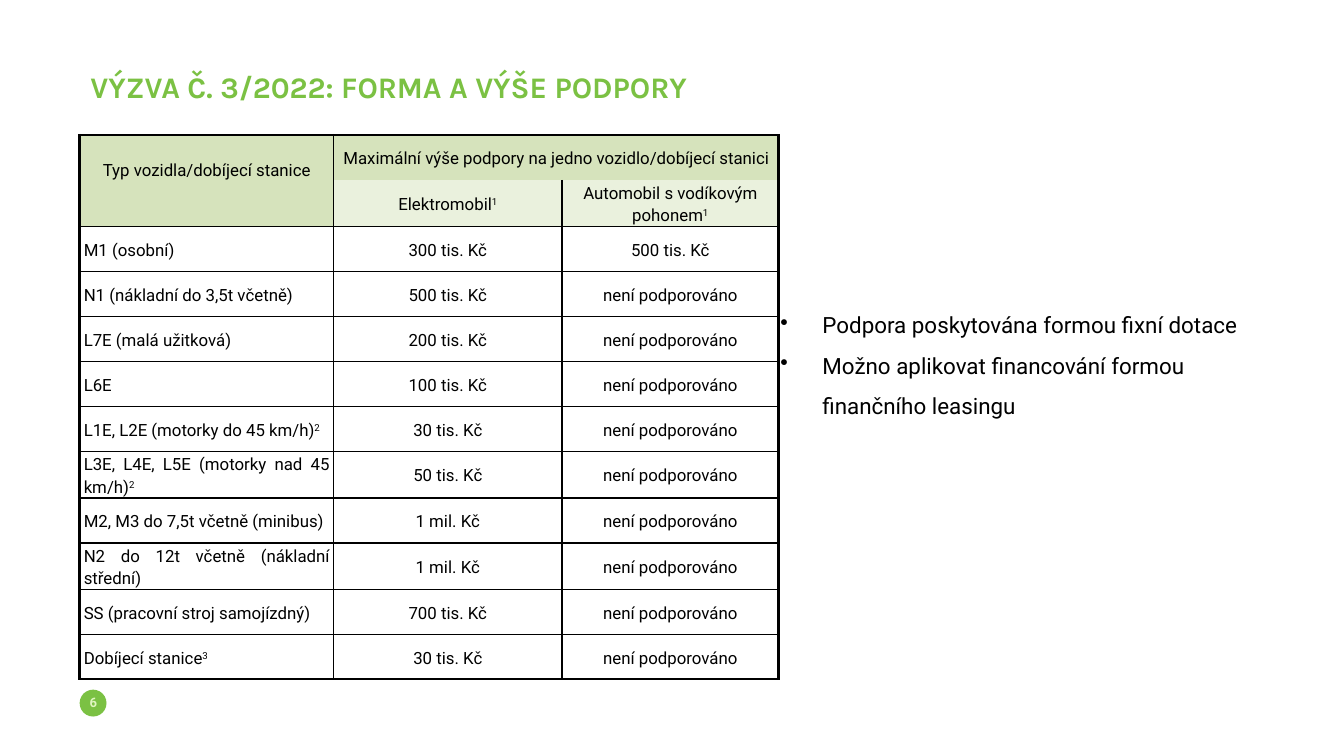
from lxml.etree import SubElement as Sub
from pptx import Presentation as Deck
from pptx.dml.color import RGBColor as Color
from pptx.enum.shapes import MSO_SHAPE as Shape
from pptx.enum.text import MSO_ANCHOR as Anchor, PP_ALIGN as Align
from pptx.oxml.ns import qn
from pptx.util import Pt

HUES = {"green": "7BC143", "pale": "DFF5C0", "head": "D6E3BC",
        "sub": "EAF1DD", "ink": "000000"}
NONE = "není podporováno"
HEAD = [
    ("Typ vozidla/dobíjecí stanice",
     "Maximální výše podpory na jedno vozidlo/dobíjecí stanici", ""),
    ("", "Elektromobil^1", "Automobil s vodíkovým pohonem^1"),
]
ROWS = [
    ("M1 (osobní)", "300 tis. Kč", "500 tis. Kč"),
    ("N1 (nákladní do 3,5t včetně)", "500 tis. Kč", NONE),
    ("L7E (malá užitková)", "200 tis. Kč", NONE),
    ("L6E", "100 tis. Kč", NONE),
    ("L1E, L2E (motorky do 45 km/h)^2", "30 tis. Kč", NONE),
    ("L3E, L4E, L5E (motorky nad 45 km/h)^2", "50 tis. Kč", NONE),
    ("M2, M3 do 7,5t včetně (minibus)", "1 mil. Kč", NONE),
    ("N2 do 12t včetně (nákladní střední)", "1 mil. Kč", NONE),
    ("SS (pracovní stroj samojízdný)", "700 tis. Kč", NONE),
    ("Dobíjecí stanice^3", "30 tis. Kč", NONE),
]
WIDE = [136, 122.4, 116]
HIGH = 24.1


def put(frame, text, size=9, font="Roboto", hue="ink", bold=False,
        align=Align.LEFT, lead=1.0, bullet=None):
    for i, line in enumerate(text.split("\n")):
        para = frame.add_paragraph() if i else frame.paragraphs[0]
        if bullet:
            props = para._p.get_or_add_pPr()
            props.set("marL", str(Pt(22.5)))
            props.set("indent", str(-Pt(22.5)))
            Sub(props, qn("a:buChar"), char=bullet)
        para.alignment = align
        para.line_spacing = lead
        for k, part in enumerate(line.split("^")):
            run = para.add_run()
            run.text = part
            run.font.name = font
            run.font.size = Pt(size)
            run.font.bold = bold
            run.font.color.rgb = Color.from_string(HUES[hue])
            if k:
                run._r.get_or_add_rPr().set("baseline", "30000")


class Page:
    def __init__(self, slide):
        self.slide = slide

    def text(self, x, y, w, h, text, pad=(7.2, 3.6), **look):
        box = self.slide.shapes.add_textbox(Pt(x), Pt(y), Pt(w), Pt(h))
        frame = box.text_frame
        frame.word_wrap = True
        frame.margin_left = frame.margin_right = Pt(pad[0])
        frame.margin_top = frame.margin_bottom = Pt(pad[1])
        put(frame, text, **look)

    def dot(self, x, y, size, hue):
        dot = self.slide.shapes.add_shape(
            Shape.OVAL, Pt(x), Pt(y), Pt(size), Pt(size))
        dot.shadow.inherit = False
        dot.fill.solid()
        dot.fill.fore_color.rgb = Color.from_string(HUES[hue])
        dot.line.fill.background()

    def edge(self, cell, side, width):
        props = cell._tc.get_or_add_tcPr()
        line = Sub(props, qn("a:ln" + side), w=str(Pt(width)))
        if width:
            fill = Sub(line, qn("a:solidFill"))
            Sub(fill, qn("a:srgbClr"), val=HUES["ink"])
        else:
            Sub(line, qn("a:noFill"))

    def cell(self, cell, text, hue, edges, align):
        for side, width in zip("LRTB", edges):
            self.edge(cell, side, width)
        if hue:
            cell.fill.solid()
            cell.fill.fore_color.rgb = Color.from_string(HUES[hue])
        else:
            cell.fill.background()
        cell.vertical_anchor = Anchor.MIDDLE
        cell.margin_left = cell.margin_right = Pt(2.2)
        cell.margin_top = cell.margin_bottom = Pt(0)
        put(cell.text_frame, text, align=align, lead=1.15)

    def table(self, x, y, head, rows):
        data = head + rows
        count = len(data)
        table = self.slide.shapes.add_table(
            count, len(WIDE), Pt(x), Pt(y),
            Pt(sum(WIDE)), Pt(HIGH * count)).table
        table.first_row = table.horz_banding = False
        for col, width in zip(table.columns, WIDE):
            col.width = Pt(width)
        for row in table.rows:
            row.height = Pt(HIGH)
        table.cell(0, 0).merge(table.cell(1, 0))
        table.cell(0, 1).merge(table.cell(0, 2))
        for r, row in enumerate(data):
            for c, text in enumerate(row):
                cell = table.cell(r, c)
                if cell.is_spanned:
                    continue
                right = c + (cell.span_width if cell.is_merge_origin else 1)
                low = r + (cell.span_height if cell.is_merge_origin else 1)
                edges = (1 if c else 1.5,
                         1.5 if right == len(WIDE) else 1,
                         {0: 1.5, 1: 0}.get(r, 1),
                         {count: 1.5, 1: 0}.get(low, 1))
                hue = {0: "head", 1: "sub"}.get(r)
                left = c == 0 and r >= len(head)
                self.cell(cell, text, hue, edges,
                          Align.JUSTIFY if left else Align.CENTER)
        table.cell(0, 0).margin_bottom = Pt(12)


def main():
    deck = Deck()
    deck.slide_width, deck.slide_height = Pt(720), Pt(405)
    page = Page(deck.slides.add_slide(deck.slide_layouts[6]))
    page.dot(42.7, 369.5, 14.4, "green")
    page.text(36, 368.6, 28, 15.8, "6", size=7, hue="pale", bold=True,
              align=Align.CENTER)
    page.text(48.5, 37, 471, 42.5, "VÝZVA Č. 3/2022: FORMA A VÝŠE PODPORY",
              pad=(0, 0), size=16, font="Karla", hue="green", bold=True)
    page.text(411, 156.2, 284, 70.6,
              "Podpora poskytována formou fixní dotace\n"
              "Možno aplikovat financování formou finančního leasingu",
              size=12, lead=1.5, bullet="•")
    page.table(42.7, 72.3, HEAD, ROWS)
    deck.save("out.pptx")


if __name__ == "__main__":
    main()
